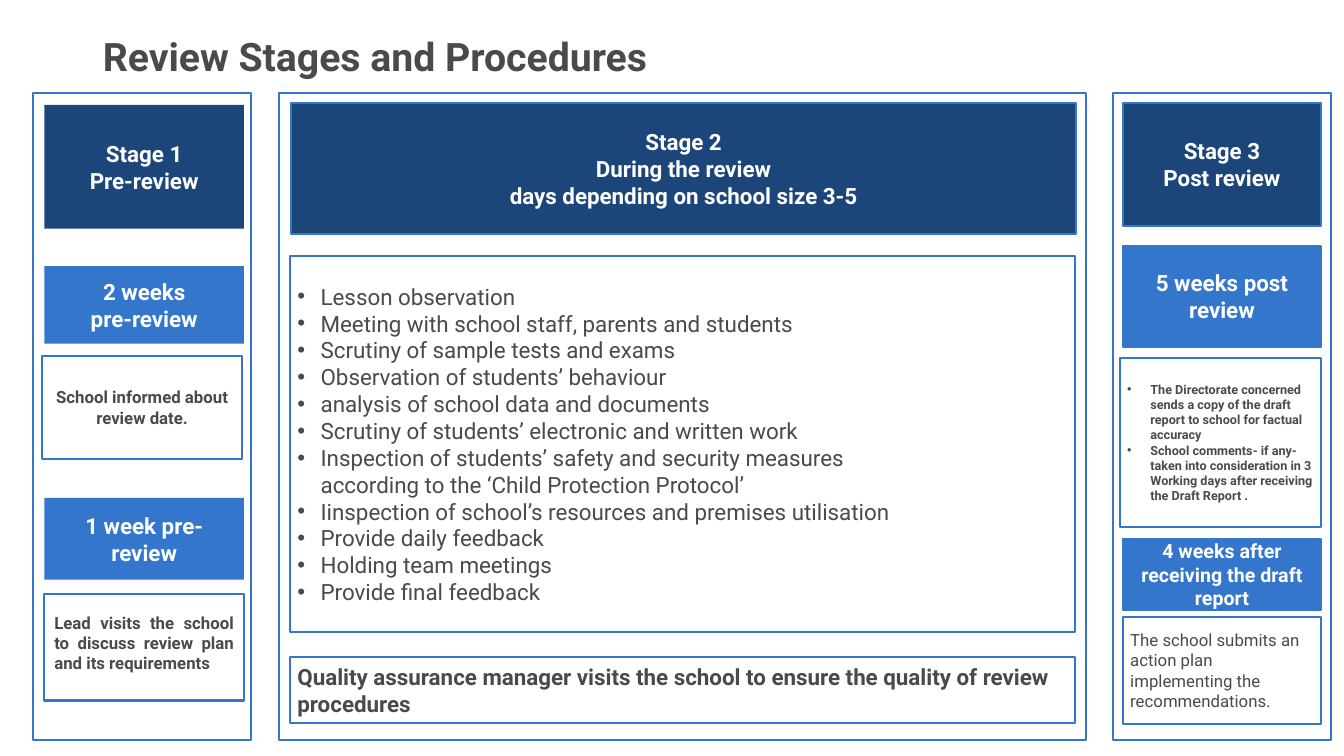
"""Builds the slide on the three stages of a school review."""
from pptx import Presentation
from pptx.dml.color import RGBColor
from pptx.enum.shapes import MSO_SHAPE
from pptx.enum.text import MSO_ANCHOR, PP_ALIGN
from pptx.oxml import parse_xml
from pptx.oxml.ns import nsdecls
from pptx.util import Pt

PX = 9144
THEME = {
    "font": "Roboto", "navy": "1C4679", "blue": "3376CC", "white": "FFFFFF", "grey": "4A4A4A",
    "title": 28, "head": 16, "step": 14, "note": 12, "small": 9, "rule": 1.5,
}
LEFT, MID, JUST = PP_ALIGN.LEFT, PP_ALIGN.CENTER, PP_ALIGN.JUSTIFY


def write(shape, text, size="head", color="grey", bold=False, align=LEFT, inset=(10, 5),
          low=None, bullets=False, plain=(), lead=None):
    """Fill a shape with one paragraph per line of text."""
    frame = shape.text_frame
    frame.word_wrap = True
    frame.vertical_anchor = MSO_ANCHOR.MIDDLE
    frame.margin_left = frame.margin_right = inset[0] * PX
    frame.margin_top = inset[1] * PX
    frame.margin_bottom = (low or inset[1]) * PX
    frame.text = text
    for item, para in enumerate(frame.paragraphs):
        para.alignment = align
        if lead:
            para.line_spacing = lead
        if bullets:
            props = para._p.get_or_add_pPr()
            props.set("marL", str(23 * PX))
            props.set("indent", str(0 if item in plain else -23 * PX))
            if item not in plain:
                props.append(parse_xml(f'<a:buFont {nsdecls("a")} typeface="Arial"/>'))
                props.append(parse_xml(f'<a:buChar {nsdecls("a")} char="•"/>'))
        for run in para.runs:
            run.font.name = THEME["font"]
            run.font.size = Pt(THEME[size])
            run.font.bold = bold
            run.font.color.rgb = RGBColor.from_string(THEME[color])


def box(place, fill=None, line=True):
    """Add a rectangle at left, top, width and height in px."""
    shape = slide.shapes.add_shape(MSO_SHAPE.RECTANGLE, *(n * PX for n in place))
    shape.shadow.inherit = False
    if fill:
        shape.fill.solid()
        shape.fill.fore_color.rgb = RGBColor.from_string(THEME[fill])
    else:
        shape.fill.background()
    if line:
        shape.line.color.rgb = RGBColor.from_string(THEME["blue"])
        shape.line.width = Pt(THEME["rule"])
    else:
        shape.line.fill.background()
    return shape


deck = Presentation()
deck.slide_width, deck.slide_height = 1333 * PX, 750 * PX
slide = deck.slides.add_slide(deck.slide_layouts[5])

title = slide.shapes.title
title.left, title.top, title.width, title.height = (n * PX for n in (92, 18, 1115, 81))
write(title, "Review Stages and Procedures", size="title", bold=True, lead=0.9)

for left, width in ((33, 216), (277, 800), (1104, 216)):
    box((left, 92, width, 642))

heads = (
    ((44, 104, 198, 123), "navy", False, "head", "Stage 1\nPre-review"),
    ((44, 264, 198, 77), "blue", False, "head", "2 weeks\npre-review"),
    ((44, 494, 198, 81), "blue", False, "head", "1 week pre- review"),
    ((289, 102, 778, 130), "navy", True, "head",
     "Stage 2\nDuring the review\ndays depending on school size 3-5"),
    ((1114, 102, 196, 122), "navy", True, "head", "Stage 3\nPost review"),
    ((1114, 244, 196, 100), "blue", True, "head", "5 weeks post review"),
    ((1114, 535, 196, 70), "blue", True, "step", "4 weeks after receiving the draft report"),
)
for place, fill, line, size, text in heads:
    write(box(place, fill, line), text, size=size, color="white", bold=True, align=MID)

tasks = """Lesson observation
Meeting with school staff, parents and students
Scrutiny of sample tests and exams
Observation of students’ behaviour
analysis of school data and documents
Scrutiny of students’ electronic and written work
Inspection of students’ safety and security measures
according to the ‘Child Protection Protocol’
Iinspection of school’s resources and premises utilisation
Provide daily feedback
Holding team meetings
Provide final feedback"""
draft = """The Directorate concerned sends a copy of the draft report to school for factual accuracy
School comments- if any- taken into consideration in 3 Working days after receiving the Draft Report ."""
check = "Quality assurance manager visits the school to ensure the quality of review procedures"
visit = "Lead visits the school to discuss review plan and its requirements"
plan = "The school submits an action plan implementing the recommendations."
slim = {"inset": (7, 4)}

notes = (
    ((42, 353, 198, 102), "School informed about review date.",
     {"size": "note", "bold": True, "align": MID}),
    ((44, 589, 198, 106), visit, {"size": "note", "bold": True, "align": JUST, "low": 13}),
    ((288, 254, 778, 373), tasks, {"bullets": True, "plain": (7,), **slim}),
    ((288, 652, 778, 65), check, {"bold": True, **slim}),
    ((1111, 355, 199, 168), draft, {"size": "small", "bold": True, "bullets": True, **slim}),
    ((1114, 612, 196, 106), plan, {"size": "note", **slim}),
)
for place, text, style in notes:
    write(box(place, "white"), text, **style)

deck.save("out.pptx")
